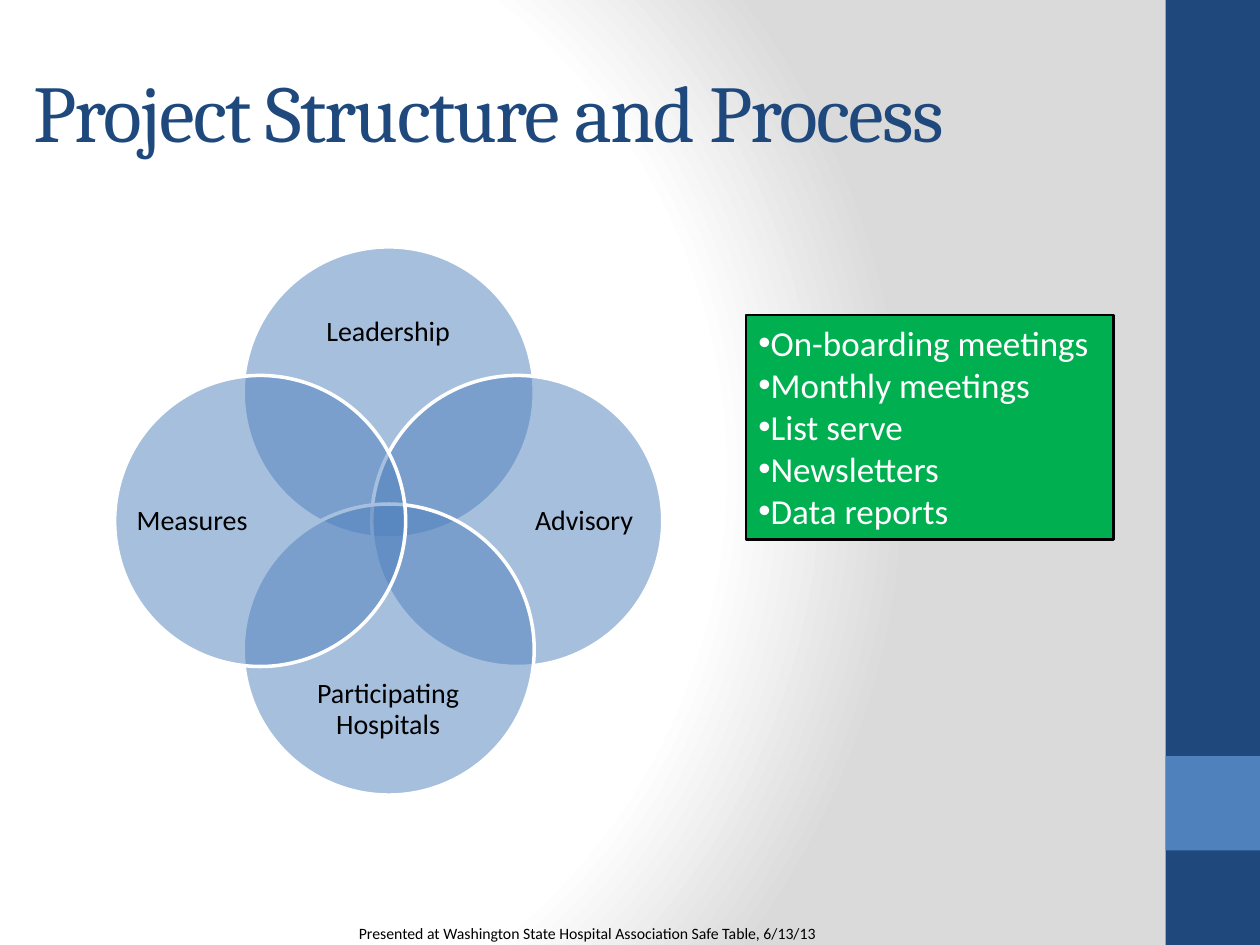
from dataclasses import dataclass

import pptx
import pptx.dml.color
import pptx.enum.shapes
import pptx.enum.text
import pptx.oxml
import pptx.oxml.ns
import pptx.util

PX = 9144  # EMU; 100 px to the inch
NAVY, BLUE, GREEN = "1F497D", "4F81BD", "00B050"
WHITE, GREY, BLACK = "FFFFFF", "DADADA", "000000"
SHAPE = pptx.enum.shapes.MSO_SHAPE
ANCHOR = pptx.enum.text.MSO_ANCHOR
ALIGN = pptx.enum.text.PP_ALIGN

CENTER_LEFT, CENTER_TOP, STEP, DIAMETER = 193, 298, 102, 231


@dataclass
class Box:
    left: int
    top: int
    width: int
    height: int

    def emu(self) -> list[int]:
        return [n * PX for n in (self.left, self.top, self.width, self.height)]


@dataclass
class VennCircle:
    label: str
    column: int
    row: int
    label_box: Box


CIRCLES = [
    VennCircle("Leadership", 0, -1, Box(219, 227, 178, 73)),
    VennCircle("Advisory", 1, 0, Box(419, 325, 89, 178)),
    VennCircle("Participating Hospitals", 0, 1, Box(219, 527, 178, 73)),
    VennCircle("Measures", -1, 0, Box(108, 325, 89, 178)),
]
ACTIVITIES = ["On-boarding meetings", "Monthly meetings", "List serve",
              "Newsletters", "Data reports"]


def rgb(color: str) -> pptx.dml.color.RGBColor:
    return pptx.dml.color.RGBColor.from_string(color)


def add_filled(shapes, kind, box: Box, fill: str, line: str = "", line_points: float = 0):
    shape = shapes.add_shape(kind, *box.emu())
    shape.shadow.inherit = False
    shape.fill.solid()
    shape.fill.fore_color.rgb = rgb(fill)
    if line:
        shape.line.color.rgb = rgb(line)
        shape.line.width = pptx.util.Pt(line_points)
    else:
        shape.line.fill.background()
    return shape


def style(paragraph, size: int, color: str, font: str = "Calibri") -> None:
    paragraph.font.size = pptx.util.Pt(size)
    paragraph.font.name = font
    paragraph.font.color.rgb = rgb(color)


def add_text(shapes, box: Box, text: str, size: int, color: str, font: str = "Calibri"):
    text_frame = shapes.add_textbox(*box.emu()).text_frame
    text_frame.word_wrap = True
    text_frame.text = text
    style(text_frame.paragraphs[0], size, color, font)
    return text_frame


def add_background(slide) -> None:
    """White glow from the left fading to grey."""
    slide.background.fill.solid()
    stops = "".join(
        f'<a:gs pos="{percent * 1000}"><a:srgbClr val="{color}"/></a:gs>'
        for percent, color in ((0, WHITE), (75, WHITE), (100, GREY)))
    gradient = pptx.oxml.parse_xml(
        f'<a:gradFill {pptx.oxml.ns.nsdecls("a")} rotWithShape="1"><a:gsLst>{stops}</a:gsLst>'
        '<a:path path="circle"><a:fillToRect l="20000" t="50000" r="100000" b="50000"/>'
        '</a:path></a:gradFill>')
    solid = next(slide.element.iter(pptx.oxml.ns.qn("a:solidFill")))
    solid.getparent().replace(solid, gradient)


def add_title(slide) -> None:
    title = add_text(slide.shapes, Box(17, 25, 833, 125),
                     "Project Structure and Process", 46, NAVY, "Cambria")
    title.vertical_anchor = ANCHOR.MIDDLE
    title.paragraphs[0].runs[0].font._element.set("spc", "-100")


def add_activities(slide) -> None:
    box = add_filled(slide.shapes, SHAPE.RECTANGLE, Box(592, 250, 292, 178),
                     GREEN, BLACK, 1.5)
    text_frame = box.text_frame
    text_frame.vertical_anchor = ANCHOR.TOP
    text_frame.text = "\n".join(ACTIVITIES)
    for paragraph in text_frame.paragraphs:
        properties = paragraph._p.get_or_add_pPr()
        properties.append(pptx.oxml.parse_xml(
            f'<a:buFont {pptx.oxml.ns.nsdecls("a")} typeface="Arial"/>'))
        properties.append(pptx.oxml.parse_xml(
            f'<a:buChar {pptx.oxml.ns.nsdecls("a")} char="•"/>'))
        paragraph.alignment = ALIGN.LEFT
        style(paragraph, 20, WHITE)


def add_venn_circle(shapes, circle: VennCircle) -> None:
    box = Box(CENTER_LEFT + circle.column * STEP, CENTER_TOP + circle.row * STEP,
              DIAMETER, DIAMETER)
    ellipse = add_filled(shapes, SHAPE.OVAL, box, BLUE, WHITE, 2)
    fill_color = next(ellipse._element.spPr.iter(pptx.oxml.ns.qn("a:srgbClr")))
    fill_color.append(pptx.oxml.parse_xml(
        f'<a:alpha {pptx.oxml.ns.nsdecls("a")} val="50000"/>'))
    label = add_text(shapes, circle.label_box, circle.label, 16, BLACK)
    label.margin_left = label.margin_right = label.margin_top = label.margin_bottom = 0
    label.vertical_anchor = ANCHOR.MIDDLE
    label.paragraphs[0].alignment = ALIGN.CENTER
    label.paragraphs[0].line_spacing = 0.9


def main() -> None:
    presentation = pptx.Presentation()
    presentation.slide_width, presentation.slide_height = 1000 * PX, 750 * PX
    slide = presentation.slides.add_slide(presentation.slide_layouts[6])
    add_background(slide)
    add_filled(slide.shapes, SHAPE.RECTANGLE, Box(925, 0, 75, 750), NAVY)
    add_filled(slide.shapes, SHAPE.RECTANGLE, Box(925, 600, 75, 75), BLUE)
    add_title(slide)
    add_activities(slide)
    venn = slide.shapes.add_group_shape()
    for circle in CIRCLES:
        add_venn_circle(venn.shapes, circle)
    add_text(slide.shapes, Box(275, 728, 467, 25),
             "Presented at Washington State Hospital Association Safe Table, 6/13/13",
             9, BLACK)
    presentation.save("out.pptx")


if __name__ == "__main__":
    main()
